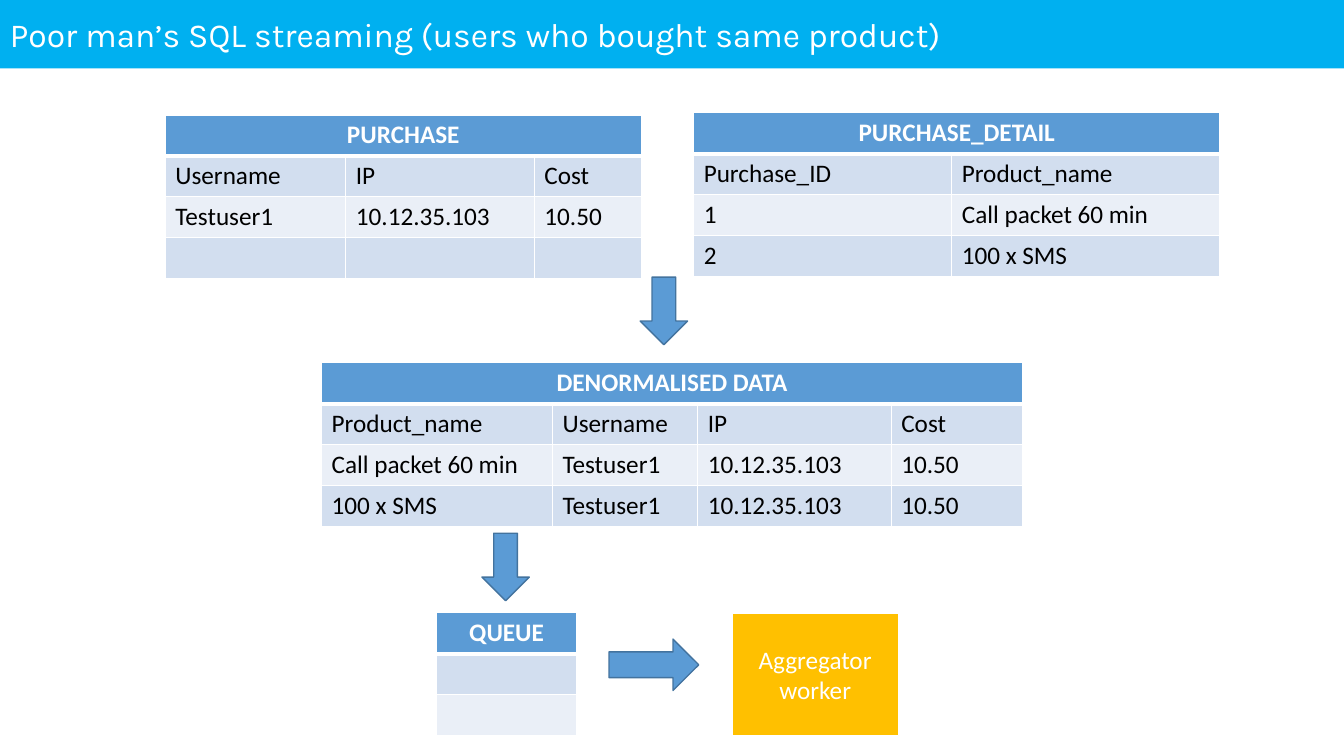
"""Build a slide showing how purchase tables are joined and streamed to a worker."""
import dataclasses

import lxml.etree
import pptx
import pptx.dml.color
import pptx.enum.shapes
import pptx.enum.text
import pptx.oxml.ns
import pptx.util

Inches = pptx.util.Inches
RGBColor = pptx.dml.color.RGBColor
Shape = pptx.enum.shapes.MSO_SHAPE
Align = pptx.enum.text.PP_ALIGN

SKY = RGBColor(0x00, 0xB0, 0xF0)
BLUE = RGBColor(0x5B, 0x9B, 0xD5)
DARK_BLUE = RGBColor(0x43, 0x73, 0x9E)
BAND_DARK = RGBColor(0xD2, 0xDE, 0xEF)
BAND_LIGHT = RGBColor(0xEA, 0xEF, 0xF7)
AMBER = RGBColor(0xFF, 0xC0, 0x00)
WHITE = RGBColor(0xFF, 0xFF, 0xFF)
BLACK = RGBColor(0x00, 0x00, 0x00)
ROW_HEIGHT = 0.405


@dataclasses.dataclass(frozen=True)
class DataTable:
    heading: str
    left: float
    top: float
    widths: tuple[float, ...]
    rows: tuple[tuple[str, ...], ...]


@dataclasses.dataclass(frozen=True)
class Block:
    kind: Shape
    left: float
    top: float
    width: float
    height: float
    fill: RGBColor = BLUE
    line: RGBColor | None = DARK_BLUE


TITLE_BAR = Block(Shape.RECTANGLE, 0, 0, 13.33, 0.68, SKY, None)
WORKER = Block(Shape.RECTANGLE, 7.26, 6.08, 1.65, 1.22, AMBER, WHITE)
ARROWS = (
    Block(Shape.DOWN_ARROW, 6.35, 2.75, 0.47, 0.67),
    Block(Shape.DOWN_ARROW, 4.78, 5.29, 0.47, 0.67),
    Block(Shape.RIGHT_ARROW, 6.04, 6.34, 0.89, 0.51),
)
BUYER = ("Testuser1", "10.12.35.103", "10.50")
BUYER_FIELDS = ("Username", "IP", "Cost")
TABLES = (
    DataTable("PURCHASE_DETAIL", 6.88, 1.12, (2.56, 2.66), (
        ("Purchase_ID", "Product_name"),
        ("1", "Call packet 60 min"),
        ("2", "100 x SMS"),
    )),
    DataTable("QUEUE", 4.33, 6.08, (1.39,), (("",), ("",))),
    DataTable("PURCHASE", 1.64, 1.14, (1.79, 1.87, 1.06),
              (BUYER_FIELDS, BUYER, ("", "", ""))),
    DataTable("DENORMALISED DATA", 3.19, 3.6, (2.29, 1.44, 1.92, 1.3), (
        ("Product_name", *BUYER_FIELDS),
        ("Call packet 60 min", *BUYER),
        ("100 x SMS", *BUYER),
    )),
)


def write(frame, text: str, *, size: float = 18, font: str = "Calibri",
          color: RGBColor = BLACK, bold: bool = False, align: Align = Align.LEFT) -> None:
    frame.text = text
    for paragraph in frame.paragraphs:
        paragraph.alignment = align
        paragraph.font.size = pptx.util.Pt(size)
        for run in paragraph.runs:
            run.font.size = pptx.util.Pt(size)
            run.font.name = font
            run.font.bold = bold
            run.font.color.rgb = color


def draw_block(slide, block: Block):
    shape = slide.shapes.add_shape(
        block.kind, Inches(block.left), Inches(block.top),
        Inches(block.width), Inches(block.height))
    shape.shadow.inherit = False
    shape.fill.solid()
    shape.fill.fore_color.rgb = block.fill
    if block.line is None:
        shape.line.fill.background()
    else:
        shape.line.color.rgb = block.line
        shape.line.width = pptx.util.Pt(1)
    shape.text_frame.vertical_anchor = pptx.enum.text.MSO_ANCHOR.MIDDLE
    return shape


def style_cell(cell, fill: RGBColor, top: float, bottom: float) -> None:
    qn = pptx.oxml.ns.qn
    properties = cell._tc.get_or_add_tcPr()
    for side, points in (("L", 1), ("R", 1), ("T", top), ("B", bottom)):
        border = lxml.etree.SubElement(
            properties, qn(f"a:ln{side}"), w=str(pptx.util.Pt(points)))
        solid = lxml.etree.SubElement(border, qn("a:solidFill"))
        lxml.etree.SubElement(solid, qn("a:srgbClr"), val=str(WHITE))
    cell.fill.solid()
    cell.fill.fore_color.rgb = fill


def draw_table(slide, data: DataTable) -> None:
    row_count, column_count = len(data.rows) + 1, len(data.widths)
    grid = slide.shapes.add_table(
        row_count, column_count, Inches(data.left), Inches(data.top),
        Inches(sum(data.widths)), Inches(ROW_HEIGHT * row_count)).table
    for column, width in zip(grid.columns, data.widths):
        column.width = Inches(width)
    for row in grid.rows:
        row.height = Inches(ROW_HEIGHT)

    for cell in grid.rows[0].cells:
        style_cell(cell, BLUE, 1, 3)
    heading = grid.cell(0, 0)
    if column_count > 1:
        heading.merge(grid.cell(0, column_count - 1))
    write(heading.text_frame, data.heading, color=WHITE, bold=True, align=Align.CENTER)

    for number, values in enumerate(data.rows, start=1):
        band = BAND_DARK if number % 2 else BAND_LIGHT
        for column, value in enumerate(values):
            cell = grid.cell(number, column)
            style_cell(cell, band, 3 if number == 1 else 1, 1)
            write(cell.text_frame, value)


def main() -> None:
    deck = pptx.Presentation()
    deck.slide_width, deck.slide_height = Inches(13.33), Inches(7.5)
    slide = deck.slides.add_slide(deck.slide_layouts[6])

    title = draw_block(slide, TITLE_BAR)
    write(title.text_frame, "Poor man’s SQL streaming (users who bought same product)",
          size=24, font="Karla", color=WHITE)
    for data in TABLES:
        draw_table(slide, data)
    for arrow in ARROWS:
        draw_block(slide, arrow)
    worker = draw_block(slide, WORKER)
    write(worker.text_frame, "Aggregator\nworker", color=WHITE, align=Align.CENTER)

    deck.save("out.pptx")


if __name__ == "__main__":
    main()
